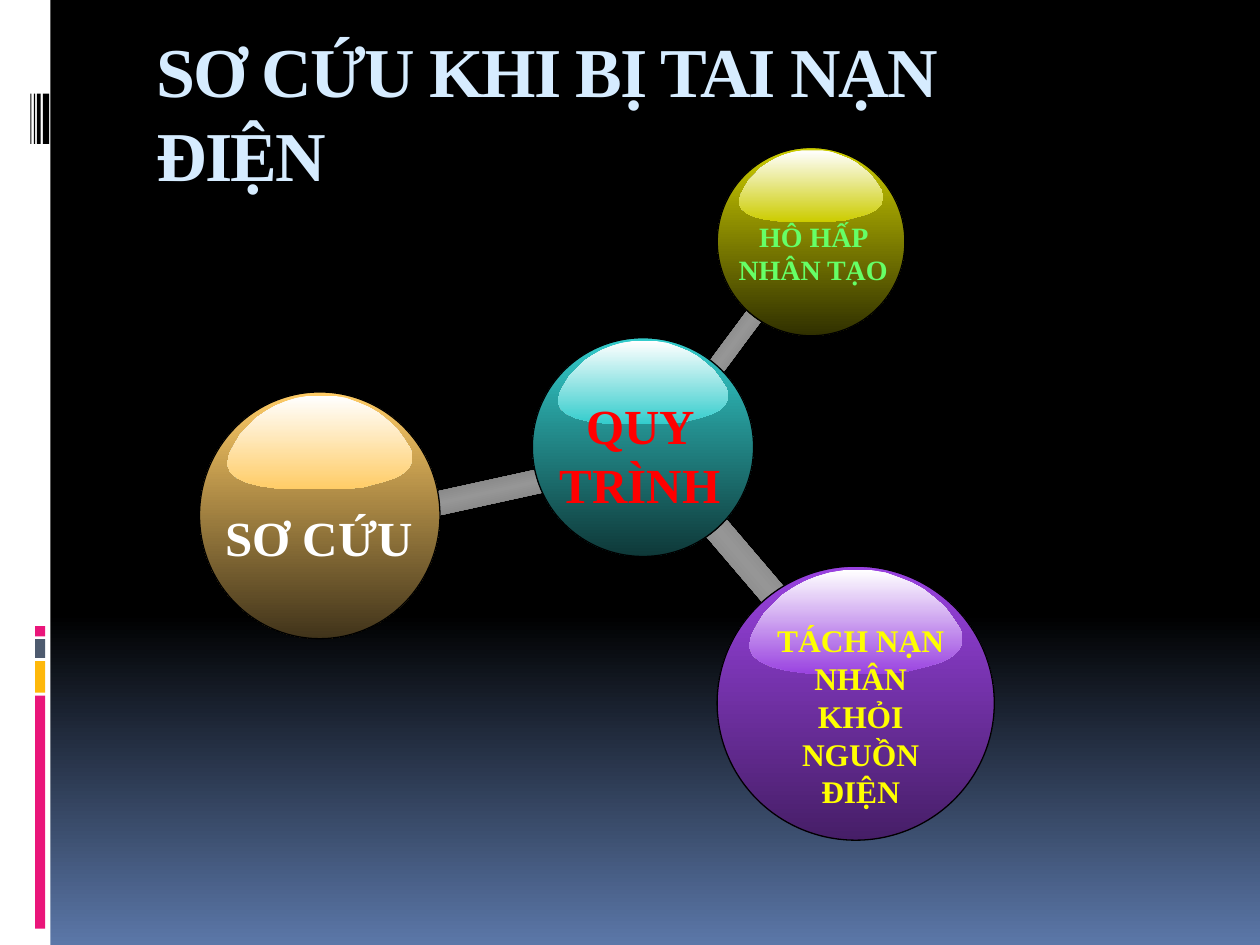
import pptx
import pptx.dml.color
import pptx.enum.shapes
import pptx.enum.text
import pptx.oxml.ns
import pptx.util
from lxml import etree

Pt = pptx.util.Pt
SHAPES = pptx.enum.shapes.MSO_SHAPE
ALIGN = pptx.enum.text.PP_ALIGN
FONT = "Times New Roman"
WHITE, BLACK, PINK = "FFFFFF", "000000", "EA157A"

# Outline of the highlight on a ball, drawn on a 170 by 82 grid
GLOSS_SIZE = (170, 82)
GLOSS = [
    (168, 46), (170, 51), (170, 55), (169, 59), (167, 63), (164, 66), (160, 69),
    (154, 72), (148, 74), (141, 76), (133, 78), (125, 80), (115, 81), (102, 82),
    (61, 82), (45, 81), (30, 79), (18, 76), (9, 72), (3, 67), (0, 60), (1, 56),
    (2, 51), (7, 42), (12, 34), (19, 27), (26, 20), (35, 14), (44, 9), (54, 5),
    (64, 2), (75, 0), (86, 0), (98, 0), (109, 2), (120, 6), (130, 10), (139, 15),
    (148, 22), (156, 29), (162, 37),
]

# Side bars: left, top, width, height, colour
SIDE_BARS = [
    (0, 0, 28.8, 540, WHITE),
    (20, 397.5, 5.8, 133.2, PINK),
    (20, 377.8, 5.8, 18, "FEB80A"),
    (20, 365.2, 5.8, 10.8, "4E5B6F"),
    (20, 357.8, 5.8, 5.8, PINK),
    (24.5, 53.5, 3.6, 28.8, BLACK),
    (21.1, 53.5, 2.2, 28.8, BLACK),
    (19.4, 53.5, 0.8, 28.8, BLACK),
    (17.3, 53.5, 0.7, 28.8, BLACK),
]

# Rods: box, rotation
RODS = [
    ((386.6, 311.8, 75.6, 15.1), 229.5),
    ((230.4, 276.5, 79.2, 13.7), 347.6),
    ((396.7, 190.1, 46.8, 10.1), 306.6),
]

# Balls: box, top colour, bottom colour, label, label box, size, label colour
BALLS = [
    ((304.2, 193, 126.4, 125), "33CCCC", "0E3838",
     "QUY TRÌNH", (311, 222.5, 109.4, 75), 28, "FF0000"),
    ((409.9, 84.3, 107.2, 107.6), "CCCC00", "303000",
     "HÔ HẤP NHÂN TẠO", (404.6, 121.7, 120.2, 46), 16, "66FF66"),
    ((114, 224, 137.4, 141), "FFCC66", "40331A",
     "SƠ CỨU", (121, 286.6, 122.4, 41), 28, WHITE),
    ((409.8, 323.5, 158.4, 156.6), "9942E0", "461E67",
     "TÁCH NẠN NHÂN KHỎI NGUỒN ĐIỆN", (432.2, 351.4, 119.2, 116.6), 18, "FFFF00"),
]


def colour(value):
    return pptx.dml.color.RGBColor.from_string(value)


def paint_gradient(fill, element, stops):
    """Fill from top to bottom with (percent, colour) stops."""
    fill.gradient()
    fill.gradient_angle = 270
    qn = pptx.oxml.ns.qn
    stop_list = next(element.iter(qn("a:gsLst")))
    for old in list(stop_list):
        stop_list.remove(old)
    for percent, value in stops:
        stop = etree.SubElement(stop_list, qn("a:gs"), pos=str(percent * 1000))
        etree.SubElement(stop, qn("a:srgbClr"), val=value)


def add_plain_shape(page, kind, box):
    shape = page.shapes.add_shape(kind, *map(Pt, box))
    shape.shadow.inherit = False
    shape.line.fill.background()
    return shape


def write_text(frame, text, size, value, align, wrap=True):
    frame.word_wrap = wrap
    frame.auto_size = pptx.enum.text.MSO_AUTO_SIZE.NONE
    frame.vertical_anchor = pptx.enum.text.MSO_ANCHOR.TOP
    para = frame.paragraphs[0]
    para.alignment = align
    span = para.add_run()
    span.text = text
    for name, setting in {"name": FONT, "size": Pt(size), "bold": True}.items():
        setattr(span.font, name, setting)
    span.font.color.rgb = colour(value)
    return span


def add_side_bars(page):
    for *box, value in SIDE_BARS:
        bar = add_plain_shape(page, SHAPES.RECTANGLE, box)
        bar.fill.solid()
        bar.fill.fore_color.rgb = colour(value)


def add_rod(page, box, rotation):
    rod = add_plain_shape(page, SHAPES.RECTANGLE, box)
    rod.rotation = rotation
    paint_gradient(rod.fill, rod.element,
                   [(0, "6B6B6B"), (50, "969696"), (100, "6B6B6B")])


def add_gloss(page, ball_box, value):
    left, top, width, height = ball_box
    scale = (Pt(width * 0.77) / GLOSS_SIZE[0], Pt(height * 0.38) / GLOSS_SIZE[1])
    builder = page.shapes.build_freeform(*GLOSS[0], scale=scale)
    builder.add_line_segments(GLOSS[1:], close=True)
    gloss = builder.convert_to_shape(Pt(left + width * 0.115), Pt(top + height * 0.015))
    gloss.shadow.inherit = False
    gloss.line.fill.background()
    paint_gradient(gloss.fill, gloss.element, [(0, WHITE), (100, value)])


def add_ball(page, box, light, dark, label, label_box, size, label_colour):
    ball = add_plain_shape(page, SHAPES.OVAL, box)
    paint_gradient(ball.fill, ball.element, [(0, light), (100, dark)])
    ball.line.color.rgb = colour(BLACK)
    ball.line.width = Pt(0.75)
    add_gloss(page, box, light)
    frame = page.shapes.add_textbox(*map(Pt, label_box)).text_frame
    write_text(frame, label, size, label_colour, ALIGN.CENTER, wrap=" " in label and size != 28
               or label.startswith("QUY"))


def place_title(page, box):
    title = page.shapes.title
    for name, length in zip(("left", "top", "width", "height"), box):
        setattr(title, name, Pt(length))
    span = write_text(title.text_frame, "SƠ CỨU KHI BỊ TAI NẠN ĐIỆN", 40,
                      "D6ECFF", ALIGN.LEFT)
    span.font._element.set("spc", "-100")


def main():
    deck = pptx.Presentation()
    deck.slide_width, deck.slide_height = Pt(720), Pt(540)
    page = deck.slides.add_slide(deck.slide_layouts[5])
    paint_gradient(page.background.fill, page.element,
                   [(0, BLACK), (65, BLACK), (100, "5B77A8")])
    add_side_bars(page)
    for rod in RODS:
        add_rod(page, *rod)
    for ball in BALLS:
        add_ball(page, *ball)
    place_title(page, (82.1, 12.2, 542.2, 51.1))
    deck.save("out.pptx")


if __name__ == "__main__":
    main()
